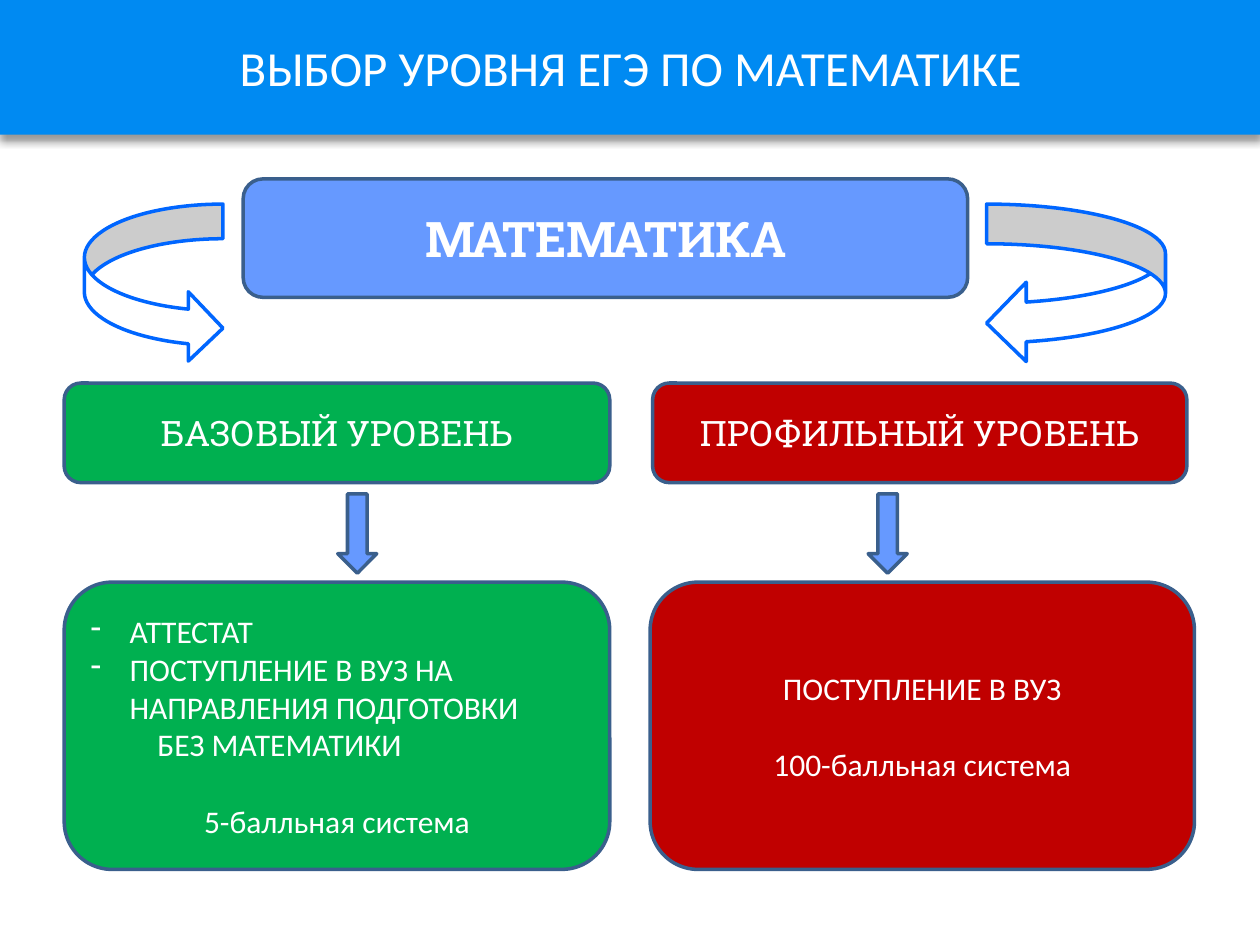
"""Build the slide on choosing the level of the maths exam."""
from lxml.etree import SubElement
from pptx import Presentation
from pptx.dml.color import RGBColor
from pptx.enum.shapes import MSO_SHAPE
from pptx.enum.text import MSO_ANCHOR, PP_ALIGN
from pptx.oxml import parse_xml
from pptx.oxml.ns import nsdecls, qn
from pptx.util import Inches, Pt

GREEN, RED, BLUE = "00B050", "C00000", "6699FF"
EDGE, WHITE = "3A5F8C", "FFFFFF"
SLAB, SANS = "Roboto Slab", "Calibri"


def add_box(kind, area, fill, edge=EDGE):
    box = slide.shapes.add_shape(kind, *[Inches(n) for n in area])
    box.shadow.inherit = False
    box.fill.solid()
    box.fill.fore_color.rgb = RGBColor.from_string(fill)
    if edge:
        box.line.color.rgb = RGBColor.from_string(edge)
        box.line.width = Pt(2)
    else:
        box.line.fill.background()
    return box


def write(box, lines, size, font, bold=False):
    frame = box.text_frame
    frame.word_wrap = True
    frame.vertical_anchor = MSO_ANCHOR.MIDDLE
    frame.text = "\n".join(lines)
    for para in frame.paragraphs:
        para.alignment = PP_ALIGN.CENTER
        para.font.size = Pt(size)
        para.font.name = font
        para.font.bold = bold
        para.font.color.rgb = RGBColor.from_string(WHITE)
    return frame.paragraphs


deck = Presentation()
deck.slide_width, deck.slide_height = Inches(10), Inches(7.5)
slide = deck.slides.add_slide(deck.slide_layouts[6])

band = add_box(MSO_SHAPE.RECTANGLE, (0, 0, 10.01, 1.07), "008AF2", None)
write(band, ["ВЫБОР УРОВНЯ ЕГЭ ПО МАТЕМАТИКЕ"], 28, SANS)
glow = band._element.spPr.find(qn("a:effectLst"))
glow.append(parse_xml(
    f'<a:outerShdw {nsdecls("a")} blurRad="{Pt(4)}" dist="{Pt(4)}" dir="5400000" '
    'rotWithShape="0"><a:srgbClr val="000000"><a:alpha val="40000"/></a:srgbClr>'
    '</a:outerShdw>'))

topic = add_box(MSO_SHAPE.ROUNDED_RECTANGLE, (1.93, 1.42, 5.75, 0.94), BLUE)
write(topic, ["МАТЕМАТИКА"], 28, SLAB, True)

levels = [
    ("БАЗОВЫЙ УРОВЕНЬ", GREEN, 0.51, 4.33, 0.51, 4.33, 2.52,
     ["АТТЕСТАТ", "ПОСТУПЛЕНИЕ В ВУЗ НА НАПРАВЛЕНИЯ ПОДГОТОВКИ",
      "БЕЗ МАТЕМАТИКИ", "5-балльная система"]),
    ("ПРОФИЛЬНЫЙ УРОВЕНЬ", RED, 5.18, 4.24, 5.16, 4.32, 6.73,
     ["ПОСТУПЛЕНИЕ В ВУЗ", "100-балльная система"]),
]
for name, fill, left, width, low_left, low_width, tip, lines in levels:
    head = add_box(MSO_SHAPE.ROUNDED_RECTANGLE, (left, 3.04, width, 0.79), fill)
    write(head, [name], 20, SLAB)
    body = add_box(MSO_SHAPE.ROUNDED_RECTANGLE, (low_left, 4.62, low_width, 2.28), fill)
    paras = write(body, lines, 18, SANS)
    paras[-1].space_before = Pt(22)
    for spot, para in enumerate(paras[:-1] if fill == GREEN else []):
        para.alignment = PP_ALIGN.LEFT
        props = para._p.get_or_add_pPr()
        dash = spot < 2
        props.set("marL", str(Inches(0.31 if dash else 0.53)))
        props.set("indent", str(Inches(-0.31 if dash else 0)))
        if dash:
            mark = SubElement(props, qn("a:buChar"), char="-")
            props.find(qn("a:defRPr")).addprevious(mark)
    arrow = add_box(MSO_SHAPE.RIGHT_ARROW, (tip, 4.08, 0.63, 0.31), BLUE)
    arrow.rotation = 90

add_box(MSO_SHAPE.CURVED_LEFT_ARROW, (7.83, 1.62, 1.42, 1.26), WHITE, "0066FF")
add_box(MSO_SHAPE.CURVED_RIGHT_ARROW, (0.67, 1.62, 1.1, 1.26), WHITE, "0066FF")

deck.save("out.pptx")
